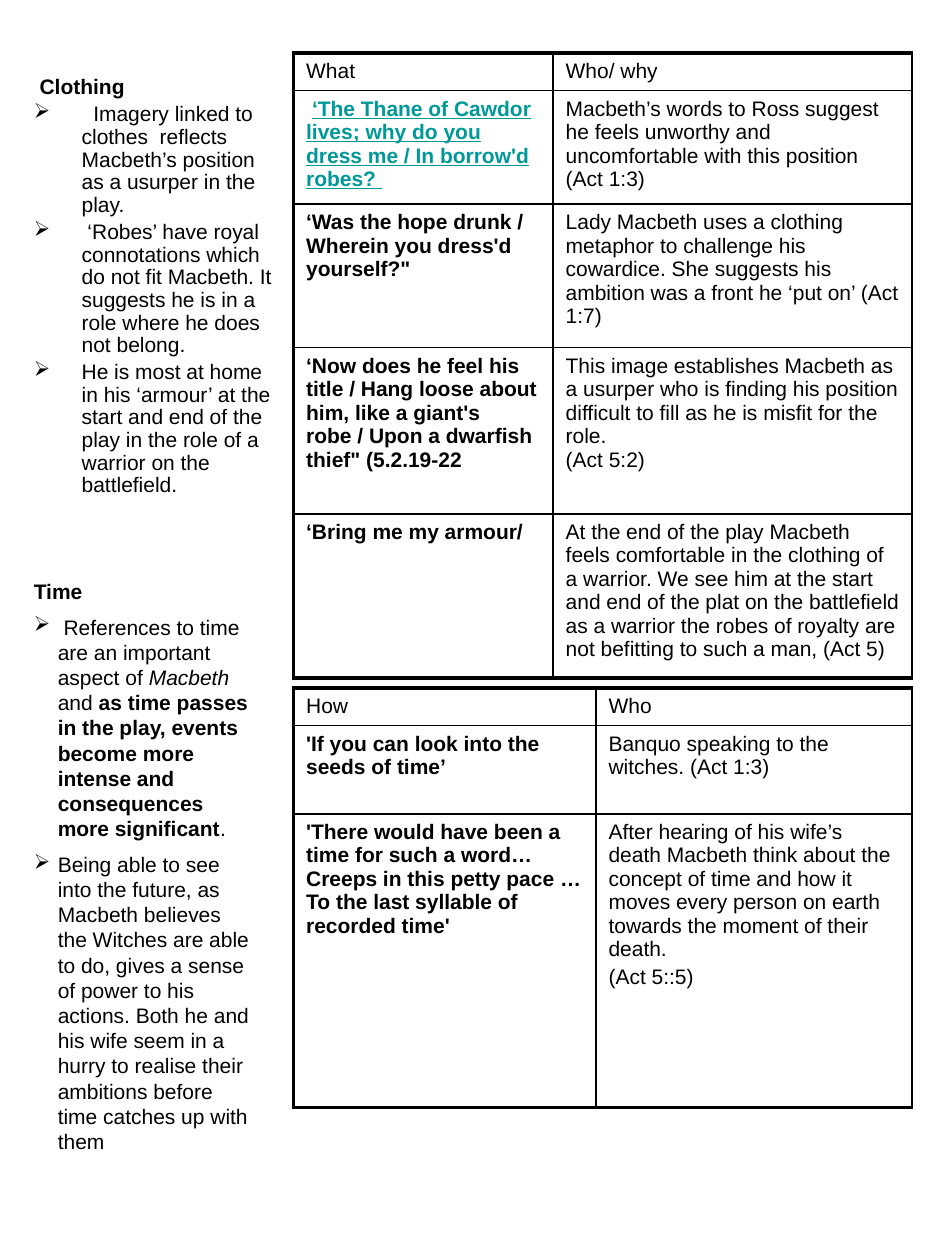
"""Build a study slide on clothing and time imagery in Macbeth."""
from lxml.etree import SubElement
from pptx import Presentation
from pptx.dml.color import RGBColor
from pptx.oxml.ns import qn
from pptx.util import Inches, Pt

BLACK = RGBColor(0, 0, 0)
TEAL = RGBColor(0, 0x99, 0x99)
FONT, SIZE = "Arial", 12
THICK, THIN = 2.25, 1
TABLE_LEFT = 2.33

BOLD = {"bold": True}
ITALIC = {"italic": True}
LINK = {"bold": True, "underline": True, "color": TEAL}

NOTES = [
    {"box": (0.17, 0.33, 2.17, 3.33), "top": 0.28, "indent": 0.38, "spacing": 0.9, "before": 0.2,
     "heading": " Clothing",
     "bullets": [
         [("  Imagery linked to clothes  reflects Macbeth’s position as a usurper in the play.", {})],
         [(" ‘Robes’ have royal connotations which do not fit Macbeth. It suggests he is in a "
           "role where he does not belong.", {})],
         [("He is most at home in his ‘armour’ at the start and end of the play in the role of "
           "a warrior on the battlefield.", {})]]},
    {"box": (0.17, 4.25, 1.92, 5.25), "top": 0.34, "indent": 0.19, "spacing": 1.0, "before": 0.5,
     "heading": "Time",
     "bullets": [
         [(" References to time are an important aspect of ", {}), ("Macbeth", ITALIC),
          (" and ", {}),
          ("as time passes in the play, events become more intense and consequences more "
           "significant", BOLD), (".", {})],
         [("Being able to see into the future, as Macbeth believes the Witches are able to do, "
           "gives a sense of power to his actions. Both he and his wife seem in a hurry to "
           "realise their ambitions before time catches up with them", {})]]},
]

TABLES = [
    {"top": 0.42, "columns": (2.06, 2.85), "heights": (0.3, 0.9, 1.14, 1.32, 1.3),
     "header": ("What", "Who/ why"),
     "rows": [
         ([(" ", BOLD),
           ("‘The Thane of Cawdor lives; why do you dress me / In borrow'd robes? ", LINK)],
          ["Macbeth’s words to Ross suggest he feels unworthy and uncomfortable with this "
           "position (Act 1:3)"]),
         ([("‘Was the hope drunk / Wherein you dress'd yourself?\"", BOLD)],
          ["Lady Macbeth uses a clothing metaphor to challenge his cowardice. She suggests his "
           "ambition was a front he ‘put on’ (Act 1:7)"]),
         ([("‘Now does he feel his title / Hang loose about him, like a giant's robe / Upon a "
            "dwarfish thief\" (5.2.19-22", BOLD)],
          ["This image establishes Macbeth as a usurper who is finding his position difficult "
           "to fill as he is misfit for the role. \v(Act 5:2)"]),
         ([("‘Bring me my armour/", BOLD)],
          ["At the end of the play Macbeth feels comfortable in the clothing of a warrior. We "
           "see him at the start and end of the plat on the battlefield as a warrior the robes "
           "of royalty are not befitting to such a man, (Act 5)"])]},
    {"top": 5.46, "columns": (2.4, 2.51), "heights": (0.3, 0.7, 2.33),
     "header": ("How", "Who"),
     "rows": [
         ([("'If you can look into the seeds of time’", BOLD)],
          ["Banquo speaking to the witches. (Act 1:3)"]),
         ([("'There would have been a time for such a word…Creeps in this petty pace … To the "
            "last syllable of recorded time'", BOLD)],
          ["After hearing of his wife’s death Macbeth think about the concept of time and how "
           "it moves every person on earth towards the moment of their death.", "(Act 5::5)"])]},
]


def write_runs(paragraph, runs):
    for text, style in runs:
        for index, part in enumerate(text.split("\v")):
            if index:
                paragraph.add_line_break()
            run = paragraph.add_run()
            run.text = part
            formats = {"name": FONT, "size": Pt(SIZE), "bold": False, **style}
            run.font.color.rgb = formats.pop("color", BLACK)
            for name, value in formats.items():
                setattr(run.font, name, value)


def write_paragraphs(frame, paragraphs, before):
    for index, runs in enumerate(paragraphs):
        paragraph = frame.add_paragraph() if index else frame.paragraphs[0]
        paragraph.space_before = Pt(SIZE * before if index else 0)
        write_runs(paragraph, runs)


def add_notes(slide, note):
    frame = slide.shapes.add_textbox(*map(Inches, note["box"])).text_frame
    frame.word_wrap = True
    frame.margin_top = Inches(note["top"])
    write_paragraphs(frame, [[(note["heading"], BOLD)], *note["bullets"]], note["before"])
    for index, paragraph in enumerate(frame.paragraphs):
        paragraph.line_spacing = note["spacing"]
        if index or note["spacing"] < 1:
            properties = paragraph._p.get_or_add_pPr()
            indent = Inches(note["indent"])
            properties.set("marL", str(indent))
            properties.set("indent", str(-indent))
            if index:
                SubElement(properties, qn("a:buChar"), char="➢")


def set_borders(cell, widths):
    properties = cell._tc.get_or_add_tcPr()
    for side, width in widths.items():
        line = SubElement(properties, qn(f"a:ln{side}"), w=str(Pt(width)))
        SubElement(SubElement(line, qn("a:solidFill")), qn("a:srgbClr"), val=str(BLACK))


def add_grid(slide, data):
    columns, heights = data["columns"], data["heights"]
    table = slide.shapes.add_table(
        len(heights), len(columns), Inches(TABLE_LEFT), Inches(data["top"]),
        Inches(sum(columns)), Inches(sum(heights))).table
    table.first_row = table.horz_banding = False
    for column, width in zip(table.columns, columns):
        column.width = Inches(width)
    header = tuple([[(title, {})]] for title in data["header"])
    body = [([quote], [[(text, {})] for text in comment]) for quote, comment in data["rows"]]
    for r, (row, height, contents) in enumerate(zip(table.rows, heights, [header, *body])):
        row.height = Inches(height)
        for c, (cell, paragraphs) in enumerate(zip(row.cells, contents)):
            write_paragraphs(cell.text_frame, paragraphs, 0.2)
            set_borders(cell, {"L": THIN if c else THICK, "R": THIN, "T": THIN if r else THICK,
                               "B": THICK if r == len(heights) - 1 else THIN})
            cell.fill.background()


def main():
    presentation = Presentation()
    presentation.slide_width, presentation.slide_height = Inches(7.5), Inches(10)
    slide = presentation.slides.add_slide(presentation.slide_layouts[6])
    for data in TABLES:
        add_grid(slide, data)
    for note in NOTES:
        add_notes(slide, note)
    presentation.save("out.pptx")


if __name__ == "__main__":
    main()
